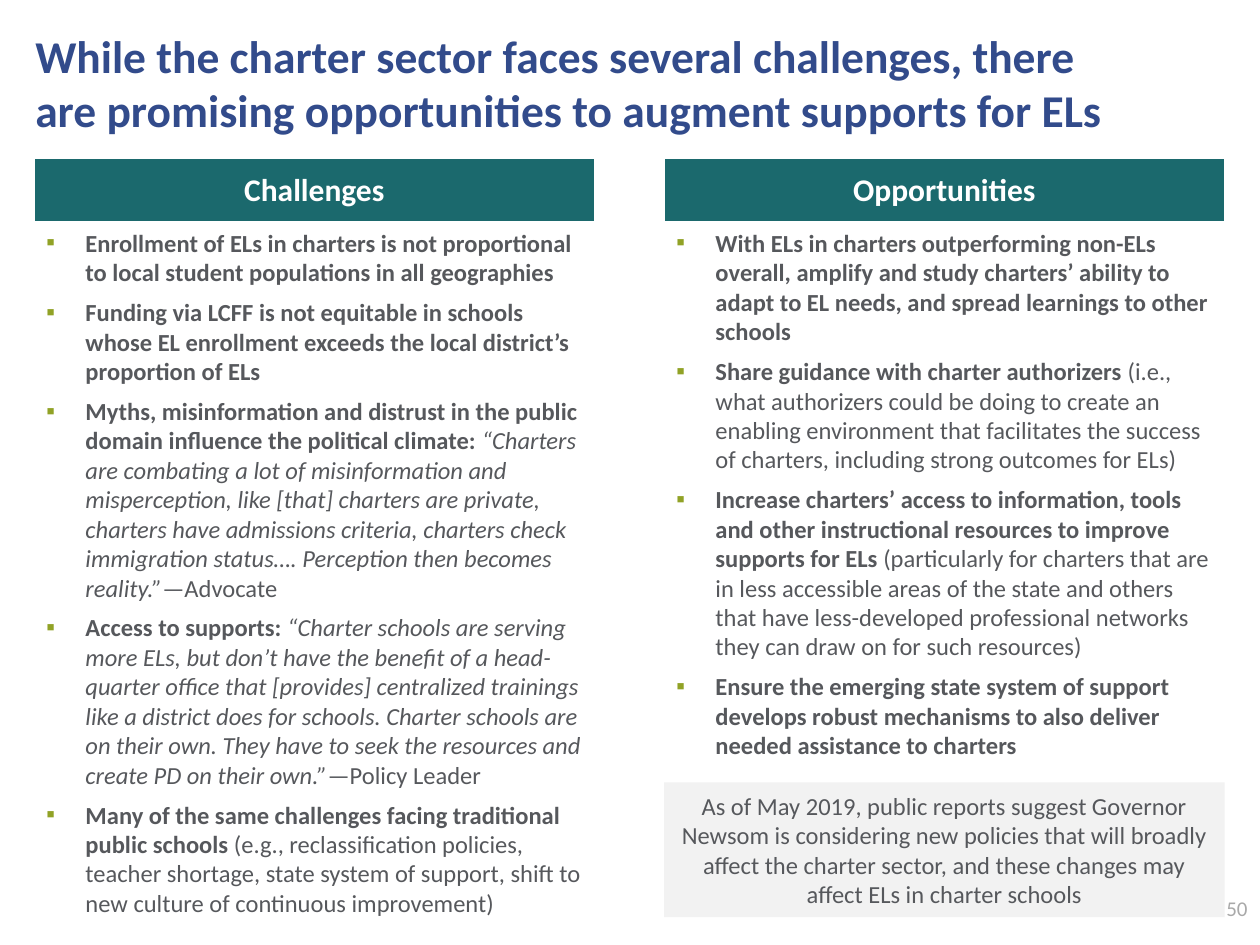
from dataclasses import dataclass

from lxml import etree
from pptx import Presentation
from pptx.dml.color import RGBColor
from pptx.enum.shapes import MSO_SHAPE
from pptx.enum.text import MSO_ANCHOR, MSO_AUTO_SIZE, PP_ALIGN
from pptx.oxml.ns import qn
from pptx.util import Inches, Pt

RECTANGLE = MSO_SHAPE.RECTANGLE
TOP, MIDDLE = MSO_ANCHOR.TOP, MSO_ANCHOR.MIDDLE
LEFT, CENTER, RIGHT = PP_ALIGN.LEFT, PP_ALIGN.CENTER, PP_ALIGN.RIGHT
NO_AUTOFIT = MSO_AUTO_SIZE.NONE


@dataclass(frozen=True)
class Theme:
    font: str = "Calibri"
    title: str = "324B8B"
    header: str = "1B696D"
    header_text: str = "FFFFFF"
    body: str = "56585C"
    bullet: str = "91A226"
    callout: str = "F2F2F2"
    number: str = "A9A9A9"
    title_size: int = 26
    header_size: int = 18
    body_size: int = 14
    number_size: int = 12


theme = Theme()
BOLD, ITALIC, PLAIN = "bold", "italic", "plain"


def style(paragraph, size, color, alignment=LEFT, bold=None):
    paragraph.alignment = alignment
    font = paragraph.font
    font.name = theme.font
    font.size = Pt(size)
    font.color.rgb = RGBColor.from_string(color)
    font.bold = bold


def add_bullet(paragraph):
    properties = paragraph._p.get_or_add_pPr()
    properties.set("marL", str(Inches(0.31)))
    properties.set("indent", str(-Inches(0.31)))
    color = etree.SubElement(properties, qn("a:buClr"))
    etree.SubElement(color, qn("a:srgbClr"), val=theme.bullet)
    etree.SubElement(properties, qn("a:buFont"), typeface=theme.font)
    etree.SubElement(properties, qn("a:buChar"), char="▪")


COLUMN_WIDTH = 4.45
HEADER_TOP, HEADER_HEIGHT = 1.26, 0.5
columns = [
    (0.27, 5.59, "Challenges", [
        [(BOLD, "Enrollment of ELs in charters is not proportional to local student "
                "populations in all geographies")],
        [(BOLD, "Funding via LCFF is not equitable in schools whose EL enrollment "
                "exceeds the local district’s proportion of ELs")],
        [(BOLD, "Myths, misinformation and distrust in the public domain influence "
                "the political climate: "),
         (ITALIC, "“Charters are combating a lot of misinformation and misperception, "
                  "like [that] charters are private, charters have admissions criteria, "
                  "charters check immigration status…. Perception then becomes reality.”"),
         (PLAIN, "—Advocate")],
        [(BOLD, "Access to supports: "),
         (ITALIC, "“Charter schools are serving more ELs, but don’t have the benefit of "
                  "a head-quarter office that [provides] centralized trainings like a "
                  "district does for schools. Charter schools are on their own. They "
                  "have to seek the resources and create PD on their own.”"),
         (PLAIN, "—Policy Leader")],
        [(BOLD, "Many of the same challenges facing traditional public schools "),
         (PLAIN, "(e.g., reclassification policies, teacher shortage, state system of "
                 "support, shift to new culture of continuous improvement)")],
    ]),
    (5.27, 4.01, "Opportunities", [
        [(BOLD, "With ELs in charters outperforming non-ELs overall, amplify and study "
                "charters’ ability to adapt to EL needs, and spread learnings to other "
                "schools")],
        [(BOLD, "Share guidance with charter authorizers "),
         (PLAIN, "(i.e., what authorizers could be doing to create an enabling "
                 "environment that facilitates the success of charters, including "
                 "strong outcomes for ELs)")],
        [(BOLD, "Increase charters’ access to information, tools and other instructional "
                "resources to improve supports for ELs "),
         (PLAIN, "(particularly for charters that are in less accessible areas of the "
                 "state and others that have less-developed professional networks they "
                 "can draw on for such resources)")],
        [(BOLD, "Ensure the emerging state system of support develops robust mechanisms "
                "to also deliver needed assistance to charters")],
    ]),
]

presentation = Presentation()
presentation.slide_width = Inches(10)
presentation.slide_height = Inches(7.5)
slide = presentation.slides.add_slide(presentation.slide_layouts[5])

title = slide.shapes.title
title.left, title.top = Inches(0.28), Inches(0.22)
title.width, title.height = Inches(8.63), Inches(0.58)
frame = title.text_frame
frame.text = ("While the charter sector faces several challenges, there are promising "
              "opportunities to augment supports for ELs")
frame.margin_left = frame.margin_right = frame.margin_top = frame.margin_bottom = 0
frame.vertical_anchor = TOP
frame.auto_size = NO_AUTOFIT
frame.word_wrap = True
style(frame.paragraphs[0], theme.title_size, theme.title, bold=True)

number = slide.shapes.add_textbox(Inches(9.33), Inches(7.06), Inches(0.67), Inches(0.3))
frame = number.text_frame
frame.text = "50"
frame.word_wrap = True
frame.vertical_anchor = MIDDLE
style(frame.paragraphs[0], theme.number_size, theme.number, RIGHT)

for left, body_height, heading, points in columns:
    table = slide.shapes.add_table(
        1, 1, Inches(left), Inches(HEADER_TOP), Inches(COLUMN_WIDTH), Inches(HEADER_HEIGHT)
    ).table
    table.first_row = table.horz_banding = False
    cell = table.cell(0, 0)
    cell.text = heading
    cell.vertical_anchor = MIDDLE
    cell.fill.solid()
    cell.fill.fore_color.rgb = RGBColor.from_string(theme.header)
    style(cell.text_frame.paragraphs[0], theme.header_size, theme.header_text, CENTER, True)

    body = slide.shapes.add_textbox(
        Inches(left), Inches(HEADER_TOP + HEADER_HEIGHT), Inches(COLUMN_WIDTH), Inches(body_height)
    )
    frame = body.text_frame
    frame.word_wrap = True
    for index, point in enumerate(points):
        paragraph = frame.add_paragraph() if index else frame.paragraphs[0]
        add_bullet(paragraph)
        paragraph.space_after = Pt(6)
        style(paragraph, theme.body_size, theme.body)
        for emphasis, text in point:
            run = paragraph.add_run()
            run.text = text
            run.font.bold = emphasis == BOLD
            run.font.italic = emphasis == ITALIC

callout = slide.shapes.add_shape(
    RECTANGLE, Inches(5.27), Inches(6.21), Inches(COLUMN_WIDTH), Inches(1.07)
)
callout.shadow.inherit = False
callout.fill.solid()
callout.fill.fore_color.rgb = RGBColor.from_string(theme.callout)
callout.line.fill.background()
frame = callout.text_frame
frame.text = ("As of May 2019, public reports suggest Governor Newsom is considering new "
              "policies that will broadly affect the charter sector, and these changes may "
              "affect ELs in charter schools")
frame.word_wrap = True
frame.vertical_anchor = MIDDLE
style(frame.paragraphs[0], theme.body_size, theme.body, CENTER)

presentation.save("out.pptx")
